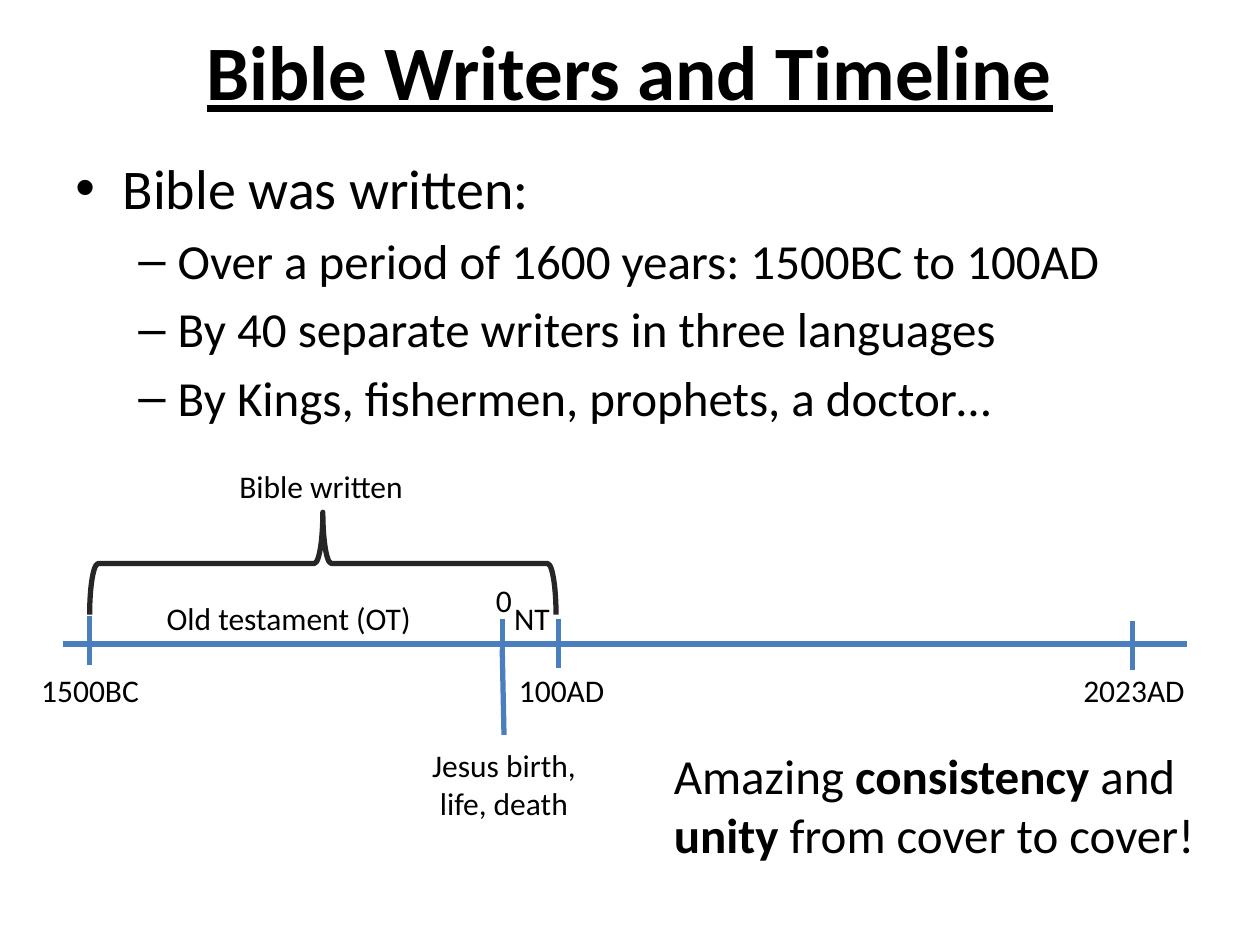
from pptx import Presentation
from pptx.dml.color import RGBColor
from pptx.enum.shapes import MSO_CONNECTOR, MSO_SHAPE
from pptx.enum.text import MSO_ANCHOR, PP_ALIGN
from pptx.oxml.ns import qn
from pptx.util import Pt
from lxml.etree import SubElement

BLACK = RGBColor(0x00, 0x00, 0x00)
BLUE = RGBColor(0x4B, 0x7E, 0xBC)
DARK = RGBColor(0x26, 0x26, 0x26)

prs = Presentation()
prs.slide_width, prs.slide_height = Pt(720), Pt(540)
s = prs.slides.add_slide(prs.slide_layouts[6])


def add_text(x, y, w, h, lines, size, align=PP_ALIGN.CENTER):
    """Each line is a list of (text, bold) runs."""
    tf = s.shapes.add_textbox(Pt(x), Pt(y), Pt(w), Pt(h)).text_frame
    tf.word_wrap = True
    for i, runs in enumerate(lines):
        p = tf.add_paragraph() if i else tf.paragraphs[0]
        p.alignment = align
        for text, bold in runs:
            r = p.add_run()
            r.text = text
            r.font.name, r.font.size, r.font.bold = "Calibri", Pt(size), bold
            r.font.color.rgb = BLACK
    return tf


def add_line(x1, y1, x2, y2):
    line = s.shapes.add_connector(
        MSO_CONNECTOR.STRAIGHT, Pt(x1), Pt(y1), Pt(x2), Pt(y2))
    line.line.color.rgb, line.line.width = BLUE, Pt(3)
    SubElement(line._element.spPr, qn("a:effectLst"))


# Title
tf = add_text(36, 6, 648, 68, [[("Bible Writers and Timeline", True)]], 44)
tf.vertical_anchor = MSO_ANCHOR.MIDDLE
tf.paragraphs[0].runs[0].font.underline = True

# Bulleted list
points = [
    "Bible was written:",
    "Over a period of 1600 years: 1500BC to 100AD",
    "By 40 separate writers in three languages",
    "By Kings, fishermen, prophets, a doctor…",
]
tf = add_text(36, 84, 648, 168, [[(t, False)] for t in points], 32, PP_ALIGN.LEFT)
for i, p in enumerate(tf.paragraphs):
    size, margin, hang, bullet = (28, 58.5, 22.5, "–") if i else (32, 27, 27, "•")
    p.level = 1 if i else 0
    p.runs[0].font.size = Pt(size)
    p.space_before = Pt(size * 0.2)
    pPr = p._p.get_or_add_pPr()
    pPr.set("marL", str(Pt(margin)))
    pPr.set("indent", str(-Pt(hang)))
    SubElement(pPr, qn("a:buFont")).set("typeface", "Arial")
    SubElement(pPr, qn("a:buChar")).set("char", bullet)

# Time axis, date ticks and the drop line to the life of Jesus
add_line(36, 368, 678.5, 368)
for x, top in [(51.25, 352), (287, 353.5), (319, 353.5), (647, 355)]:
    add_line(x, top, x, top + 28)
add_line(288, 420, 287, 371)

# Brace over the writing period
w, h = 58.5, 266.5
cx, cy = 184.5, 322
sp = s.shapes.add_shape(
    MSO_SHAPE.RIGHT_BRACE, Pt(cx - w / 2), Pt(cy - h / 2), Pt(w), Pt(h))
sp.rotation = 270
sp.shadow.inherit = False
sp.fill.background()
sp.line.color.rgb, sp.line.width = DARK, Pt(3)

# Timeline labels
for text, x, y, w, h in [
    ("1500BC", 12.5, 380, 78, 29),
    ("0", 249, 328.5, 78, 29),
    ("100AD", 282, 380, 78, 29),
    ("2023AD", 609, 380, 78, 29),
    ("Jesus birth, life, death", 234, 423, 108, 51),
    ("Bible written", 116, 263.5, 135, 29),
    ("Old testament (OT)", 78, 338.5, 174, 29),
    ("NT", 280, 339, 48, 29),
]:
    add_text(x, y, w, h, [[(text, False)]], 18)

# Conclusion
add_text(378, 422.5, 318, 75, [[
    ("Amazing ", False), ("consistency", True), (" and ", False),
    ("unity", True), (" from cover to cover!", False),
]], 28, PP_ALIGN.LEFT)

prs.save("out.pptx")
